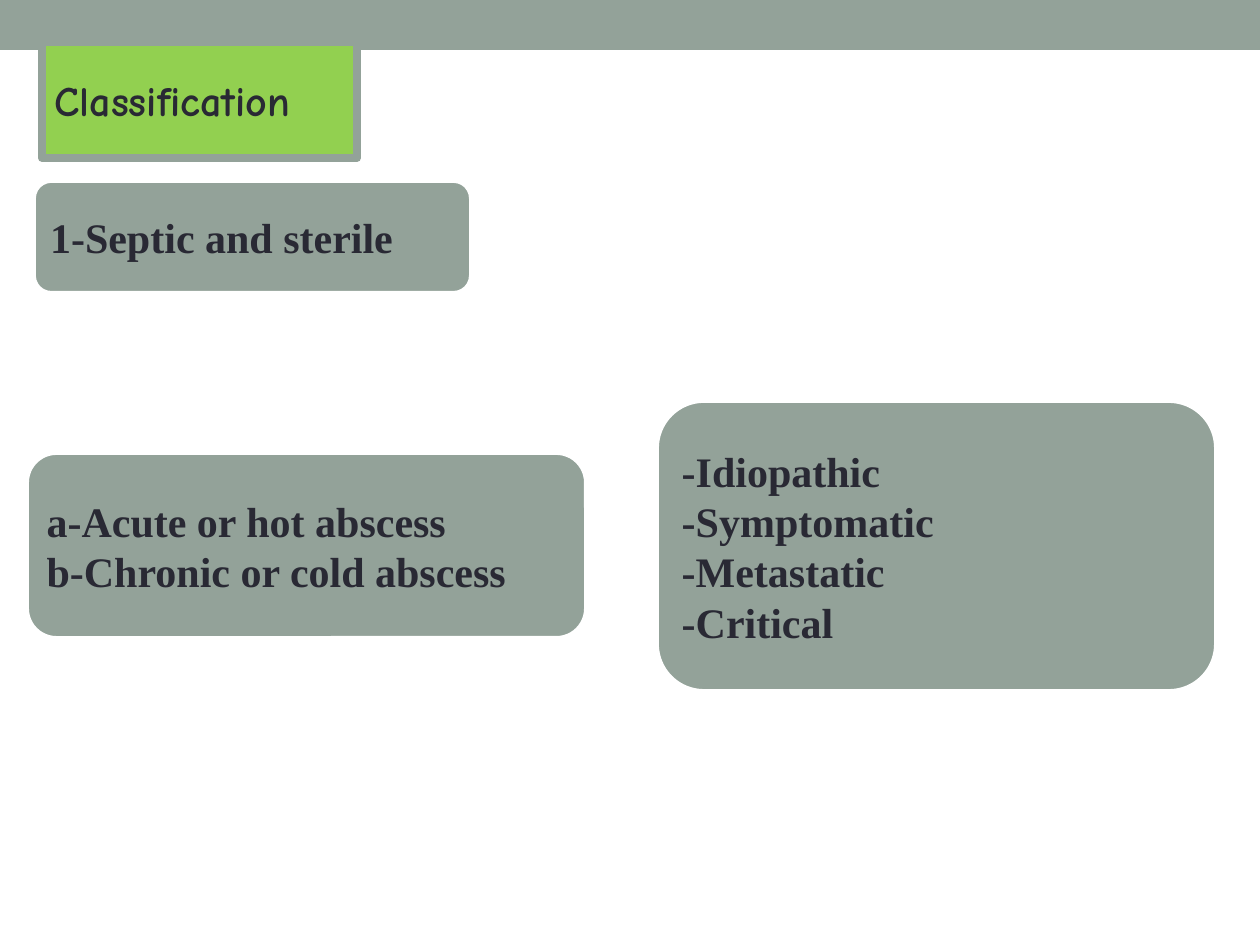
"""Build the abscess classification slide."""
from copy import deepcopy
from pptx import Presentation
from pptx.dml.color import RGBColor
from pptx.enum.shapes import MSO_SHAPE as Geo
from pptx.enum.text import MSO_ANCHOR as Anchor, MSO_AUTO_SIZE as Auto, PP_ALIGN as Align
from pptx.util import Pt

PX = 914400 / 126
HUES = {"sage": "93A299", "lime": "92D050", "ink": "292934", "white": "FFFFFF"}


def hue(name):
    return RGBColor.from_string(HUES[name])


def place(shape, spot):
    for key, val in zip(("left", "top", "width", "height"), spot):
        setattr(shape, key, round(val * PX))


deck = Presentation()
deck.slide_width, deck.slide_height = round(1260 * PX), round(945 * PX)
slide = deck.slides.add_slide(deck.slide_layouts[5])
shapes = slide.shapes

bar = shapes.add_shape(Geo.RECTANGLE, 0, 0, 0, 0)
place(bar, (0, 0, 1260, 50))
bar.shadow.inherit = False
bar.fill.solid()
bar.fill.fore_color.rgb = hue("sage")
bar.line.fill.background()
shapes._spTree.insert(2, bar._element)

title = shapes.title
serif, comic = "Times New Roman", "Comic Neue"
cards = [
    (None, (32, 179, 441, 116), "sage", "white", serif, ["1-Septic and sterile"]),
    (title, (42, 42, 315, 116), "lime", "sage", comic, ["Classification"]),
    (None, (25, 451, 563, 189), "sage", "white", serif,
     ["a-Acute or hot abscess", "b-Chronic or cold abscess"]),
    (None, (655, 399, 563, 294), "sage", "white", serif,
     ["-Idiopathic", "-Symptomatic", "-Metastatic", "-Critical"]),
]
frame = {"word_wrap": True, "auto_size": Auto.NONE, "vertical_anchor": Anchor.MIDDLE}
style = {"size": Pt(24), "bold": True}

for holder, spot, fill, edge, face, lines in cards:
    card = holder or shapes.add_shape(Geo.ROUNDED_RECTANGLE, 0, 0, 0, 0)
    place(card, spot)
    if holder:
        card._element.spPr.insert(1, deepcopy(round_geo))
    else:
        round_geo = card._element.spPr.prstGeom
        card.shadow.inherit = False
    card.fill.solid()
    card.fill.fore_color.rgb = hue(fill)
    card.line.color.rgb = hue(edge)
    card.line.width = Pt(4.5)
    text = card.text_frame
    for key, val in frame.items():
        setattr(text, key, val)
    text.text = "\n".join(lines)
    for para in text.paragraphs:
        para.alignment = Align.LEFT
        font = para.runs[0].font
        for key, val in {**style, "name": face}.items():
            setattr(font, key, val)
        font.color.rgb = hue("ink")

deck.save("out.pptx")
